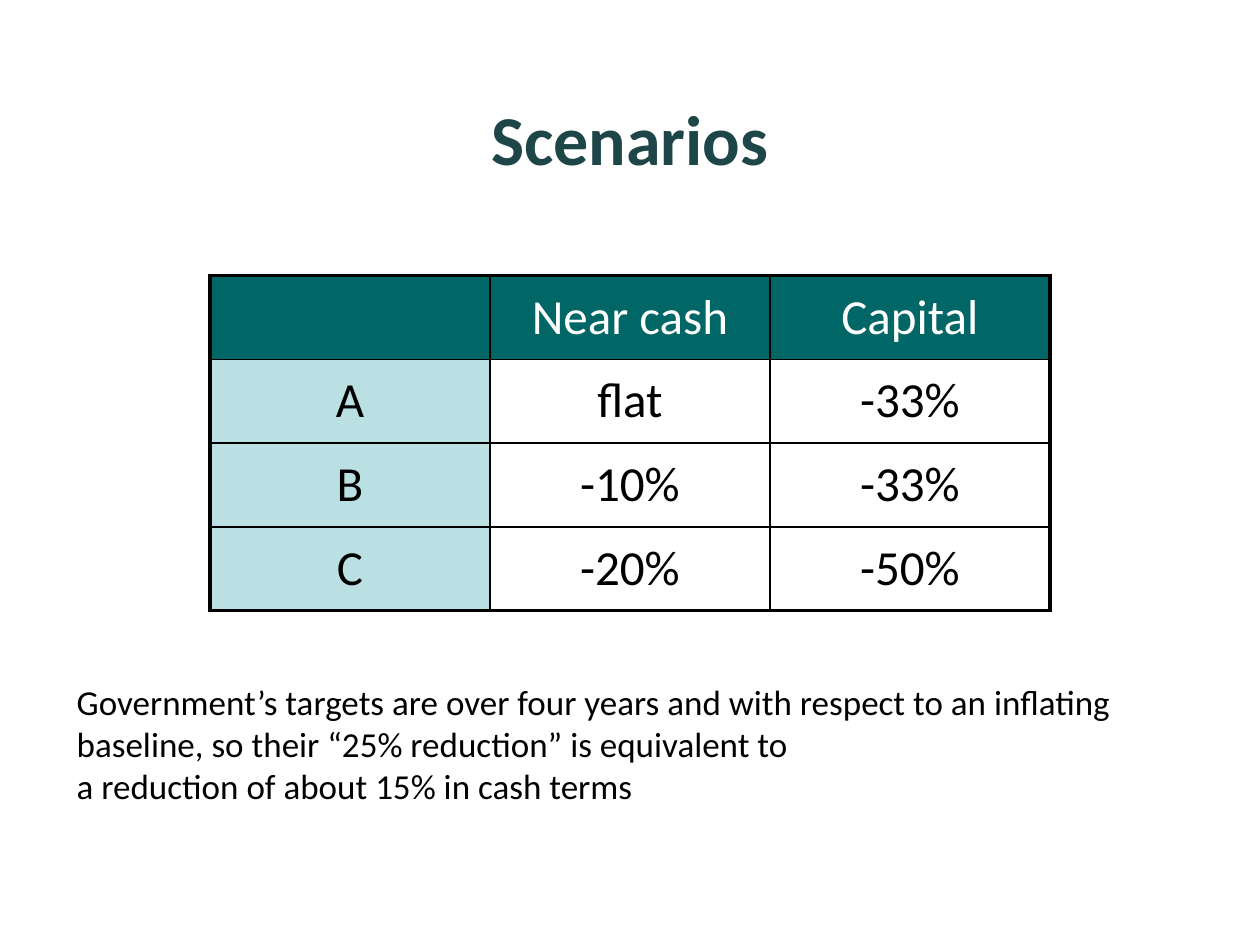
import pptx
import pptx.dml.color
import pptx.enum.text
import pptx.util
from dataclasses import dataclass
from lxml import etree

Pt = pptx.util.Pt
Color = pptx.dml.color.RGBColor.from_string
Anchor = pptx.enum.text.MSO_ANCHOR
Align = pptx.enum.text.PP_ALIGN


@dataclass(frozen=True)
class Theme:
    font: str = "Calibri"
    title: str = "1E4649"
    header: str = "006666"
    label: str = "BBE0E3"
    white: str = "FFFFFF"
    black: str = "000000"
    title_size: int = 40
    table_size: int = 28
    note_size: int = 20
    thick: float = 2.25
    thin: float = 1


theme = Theme()


def write(frame, text, align, size, color, bold=False):
    frame.word_wrap = True
    para = frame.paragraphs[0]
    para.text = text
    para.alignment = align
    formats = {"name": theme.font, "size": Pt(size), "bold": bold}
    for name, value in formats.items():
        setattr(para.font, name, value)
    para.font.color.rgb = Color(color)


def border(cell, side, width):
    properties = cell._tc.get_or_add_tcPr()
    line = etree.SubElement(properties, pptx.oxml.ns.qn(f"a:ln{side}"), w=str(Pt(width)))
    fill = etree.SubElement(line, pptx.oxml.ns.qn("a:solidFill"))
    etree.SubElement(fill, pptx.oxml.ns.qn("a:srgbClr"), val=theme.black)


deck = pptx.Presentation()
deck.slide_width, deck.slide_height = Pt(720), Pt(540)
page = deck.slides.add_slide(deck.slide_layouts[6])

title = page.shapes.add_textbox(Pt(0), Pt(0), Pt(720), Pt(157.5))
title.text_frame.vertical_anchor = Anchor.MIDDLE
write(title.text_frame, "Scenarios", Align.CENTER, theme.title_size, theme.title, True)

scenarios = [
    ["", "Near cash", "Capital"],
    ["A", "flat", "-33%"],
    ["B", "-10%", "-33%"],
    ["C", "-20%", "-50%"],
]
last_row, last_column = len(scenarios) - 1, len(scenarios[0]) - 1
table = page.shapes.add_table(
    len(scenarios), len(scenarios[0]), Pt(120), Pt(157.5), Pt(480), Pt(191.4)
).table
table.first_row = table.horz_banding = False

for row, values in enumerate(scenarios):
    for column, value in enumerate(values):
        cell = table.cell(row, column)
        color = theme.white if row == 0 else theme.black
        write(cell.text_frame, value, Align.CENTER, theme.table_size, color)
        cell.vertical_anchor = Anchor.MIDDLE
        outer = {
            "L": column == 0,
            "R": column == last_column,
            "T": row == 0,
            "B": row == last_row,
        }
        for side, is_outer in outer.items():
            border(cell, side, theme.thick if is_outer else theme.thin)
        if row == 0 or column == 0:
            cell.fill.solid()
            cell.fill.fore_color.rgb = Color(theme.header if row == 0 else theme.label)
        else:
            cell.fill.background()

note = page.shapes.add_textbox(Pt(36.75), Pt(385.2), Pt(629.25), Pt(79.2))
write(
    note.text_frame,
    "Government’s targets are over four years and with respect to an inflating "
    "baseline, so their “25% reduction” is equivalent to\v"
    "a reduction of about 15% in cash terms",
    Align.LEFT,
    theme.note_size,
    theme.black,
)

deck.save("out.pptx")
